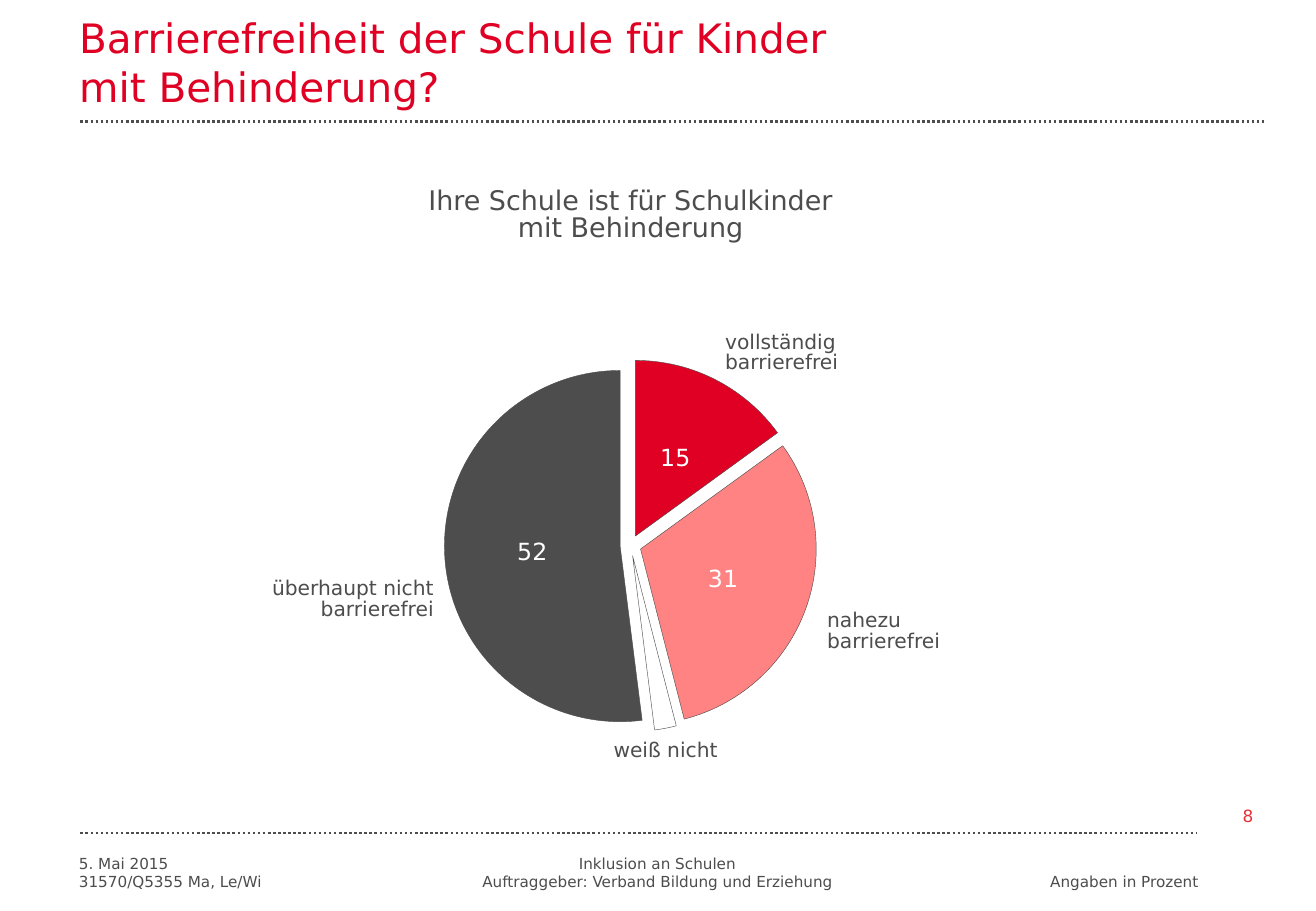
from dataclasses import dataclass

from lxml import etree
from pptx import Presentation
from pptx.chart import data as chart_data
from pptx.dml.color import RGBColor
from pptx.enum import chart as chart_enum, dml, shapes, text
from pptx.oxml import parse_xml
from pptx.oxml.ns import nsdecls, qn
from pptx.util import Cm, Pt


@dataclass(frozen=True)
class Theme:
    font: str = "DejaVu Sans"
    red: str = "DF0024"
    rose: str = "FF8383"
    grey: str = "4D4D4D"
    white: str = "FFFFFF"
    page_red: str = "E73137"
    title: int = 24
    heading: int = 16
    value: int = 14
    label: int = 12
    page: int = 10
    footer: int = 9


THEME = Theme()
LEFT, CENTER, RIGHT = text.PP_ALIGN.LEFT, text.PP_ALIGN.CENTER, text.PP_ALIGN.RIGHT

TITLE = ["Barrierefreiheit der Schule für Kinder", "mit Behinderung?"]
TITLE_AREA = (1.4, 0.13, 16.46, 2.31)

# answer, percent, slice colour, value shown
ANSWERS = [
    ("vollständig barrierefrei", 15, THEME.red, True),
    ("nahezu barrierefrei", 31, THEME.rose, True),
    ("weiß nicht", 2, THEME.white, False),
    ("überhaupt nicht barrierefrei", 52, THEME.grey, True),
]
PIE_AREA = (7.52, 6.65, 10.8, 10.06)
PLOT_LAYOUT = {"x": 0.164, "y": 0.081, "w": 0.721, "h": 0.784}
EXPLOSION = 6

# left, top, width, height in cm; lines; size; alignment; line spacing
CAPTIONS = [
    ((8.56, 3.81, 9.25, 1.42), ["Ihre Schule ist für Schulkinder", "mit Behinderung"],
     THEME.heading, CENTER, 0.85),
    ((14.91, 6.83, 2.92, 1.12), ["vollständig", "barrierefrei"], THEME.label, LEFT, 0.85),
    ((17.04, 12.65, 2.92, 1.12), ["nahezu", "barrierefrei"], THEME.label, LEFT, 0.85),
    ((12.57, 15.29, 2.69, 0.76), ["weiß nicht"], THEME.label, CENTER, 1.0),
    ((5.38, 11.99, 3.94, 1.12), ["überhaupt nicht", "barrierefrei"],
     THEME.label, RIGHT, 0.85),
    ((1.4, 17.73, 4.47, 1.02), ["5. Mai 2015", "31570/Q5355 Ma, Le/Wi"],
     THEME.footer, LEFT, 1.0),
    ((9.75, 17.73, 7.98, 1.02),
     ["Inklusion an Schulen", "Auftraggeber: Verband Bildung und Erziehung"],
     THEME.footer, CENTER, 1.0),
    ((21.67, 18.11, 3.66, 0.64), ["Angaben in Prozent"], THEME.footer, CENTER, 1.0),
]
PAGE_NUMBER = "8"
PAGE_AREA = (25.53, 16.56, 1.12, 0.99)

RULE_START = 1.68
RULES = [(26.44, 2.54), (25.02, 17.42)]  # right end, height on the page


def rgb(color):
    return RGBColor.from_string(color)


def style_font(font, size, color):
    font.name = THEME.font
    font.size = Pt(size)
    font.color.rgb = rgb(color)


def write_lines(frame, lines, size, color, align, spacing=1.0):
    frame.word_wrap = False
    frame.auto_size = text.MSO_AUTO_SIZE.NONE
    for index, line in enumerate(lines):
        para = frame.add_paragraph() if index else frame.paragraphs[0]
        para.alignment = align
        para.line_spacing = spacing
        span = para.add_run()
        span.text = line
        style_font(span.font, size, color)


def add_title(page):
    title = page.shapes.title
    title.left, title.top, title.width, title.height = map(Cm, TITLE_AREA)
    write_lines(title.text_frame, TITLE, THEME.title, THEME.red, LEFT)
    title.text_frame.vertical_anchor = text.MSO_ANCHOR.BOTTOM


def add_rule(page, end, height):
    rule = page.shapes.add_connector(
        shapes.MSO_CONNECTOR.STRAIGHT, Cm(RULE_START), Cm(height), Cm(end), Cm(height))
    rule.line.color.rgb = rgb(THEME.grey)
    rule.line.width = Pt(1.5)
    rule.line.dash_style = dml.MSO_LINE.ROUND_DOT
    etree.SubElement(rule._element.spPr, qn("a:effectLst"))


def add_caption(page, area, lines, size, align, spacing):
    box = page.shapes.add_textbox(*map(Cm, area))
    write_lines(box.text_frame, lines, size, THEME.grey, align, spacing)


def add_page_number(page):
    frame = page.shapes.add_textbox(*map(Cm, PAGE_AREA)).text_frame
    frame.margin_left = frame.margin_right = frame.margin_top = frame.margin_bottom = 0
    frame.vertical_anchor = text.MSO_ANCHOR.MIDDLE
    write_lines(frame, [PAGE_NUMBER], THEME.page, THEME.page_red, CENTER)


def fix_plot_area(chart):
    """Pin the inner plot area to fractions of the chart frame."""
    plot_area = chart._chartSpace.chart.plotArea
    for layout in plot_area.findall(qn("c:layout")):
        plot_area.remove(layout)
    modes = '<c:layoutTarget val="inner"/><c:xMode val="edge"/><c:yMode val="edge"/>'
    places = "".join(f'<c:{key} val="{part}"/>' for key, part in PLOT_LAYOUT.items())
    plot_area.insert(0, parse_xml(
        f'<c:layout {nsdecls("c")}><c:manualLayout>{modes}{places}'
        "</c:manualLayout></c:layout>"))


def add_pie(page):
    answers = chart_data.CategoryChartData()
    answers.categories = [name for name, *_ in ANSWERS]
    answers.add_series("Series 1", [percent for _, percent, *_ in ANSWERS])
    chart = page.shapes.add_chart(
        chart_enum.XL_CHART_TYPE.PIE, *map(Cm, PIE_AREA), answers).chart
    chart.has_legend = False
    chart.has_title = False
    style_font(chart.font, THEME.value, THEME.grey)
    fix_plot_area(chart)

    chart.plots[0].vary_by_categories = True
    series = chart.plots[0].series[0]
    labels = series.data_labels
    labels.show_value = True
    labels.position = chart_enum.XL_LABEL_POSITION.CENTER
    style_font(labels.font, THEME.value, THEME.white)

    hidden = 0
    for index, (_, _, color, shown) in enumerate(ANSWERS):
        look = series.points[index].format
        look.fill.solid()
        look.fill.fore_color.rgb = rgb(color)
        look.line.color.rgb = rgb(THEME.grey)
        look.line.width = Pt(0.25)
        if not shown:
            labels._element.insert(hidden, parse_xml(
                f'<c:dLbl {nsdecls("c")}><c:idx val="{index}"/>'
                '<c:delete val="1"/></c:dLbl>'))
            hidden += 1

    series.format.line.color.rgb = rgb(THEME.grey)
    series._element.find(qn("c:spPr")).addnext(
        parse_xml(f'<c:explosion {nsdecls("c")} val="{EXPLOSION}"/>'))


def main():
    deck = Presentation()
    deck.slide_width, deck.slide_height = Cm(27.51), Cm(19.05)
    page = deck.slides.add_slide(deck.slide_layouts[5])
    for end, height in RULES:
        add_rule(page, end, height)
    add_title(page)
    add_pie(page)
    for caption in CAPTIONS:
        add_caption(page, *caption)
    add_page_number(page)
    deck.save("out.pptx")


if __name__ == "__main__":
    main()
